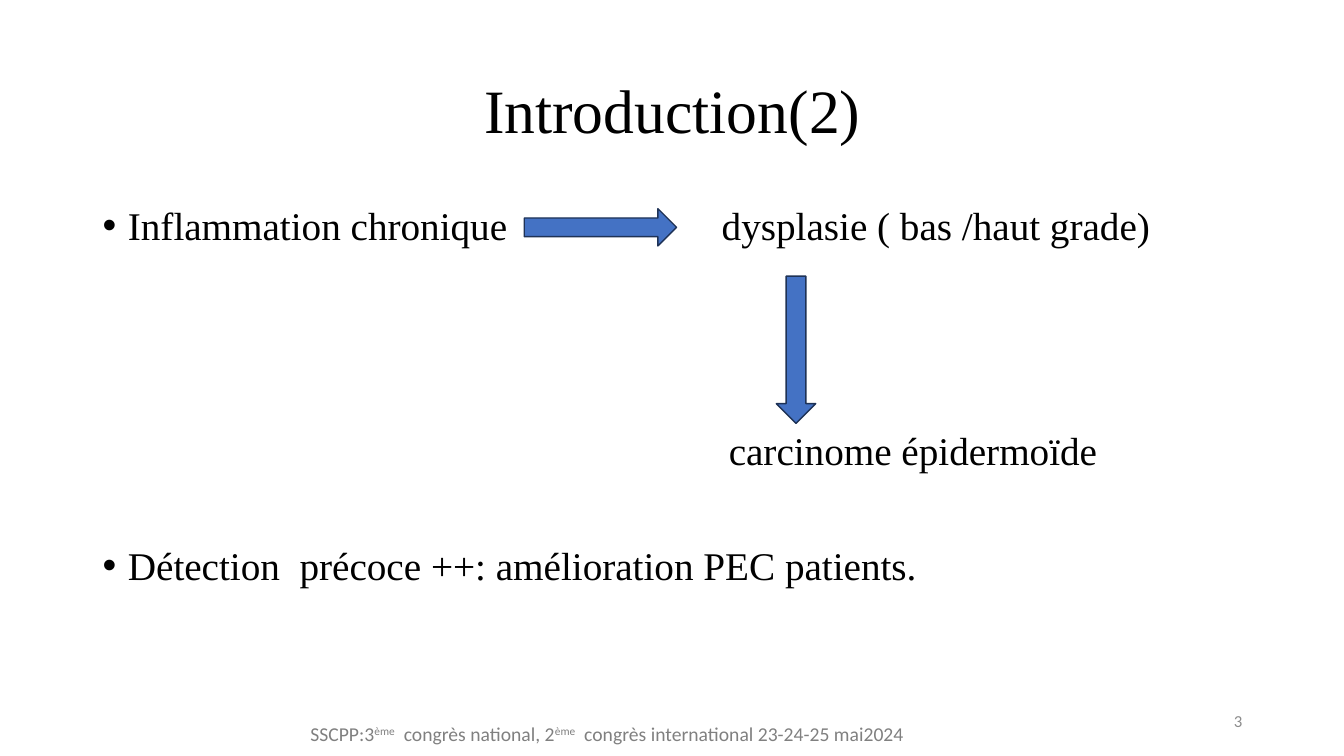
from dataclasses import dataclass
from typing import NamedTuple

import pptx
import pptx.dml.color
import pptx.enum.shapes
import pptx.enum.text
import pptx.oxml
import pptx.oxml.ns
import pptx.util

Inches = pptx.util.Inches
Pt = pptx.util.Pt
ALIGN = pptx.enum.text.PP_ALIGN
ANCHOR = pptx.enum.text.MSO_ANCHOR
SHAPE = pptx.enum.shapes.MSO_SHAPE


class Style(NamedTuple):
    font: str
    size: float
    color: str
    line_spacing: float = 1.0


@dataclass(frozen=True)
class Theme:
    title: Style = Style("Times New Roman", 44, "000000", 0.9)
    body: Style = Style("Times New Roman", 28, "000000", 0.9)
    footer: Style = Style("Calibri", 14, "808080")
    number: Style = Style("Calibri", 12, "8C8C8C")
    arrow_fill: str = "4472C4"
    arrow_line: str = "1E3256"


class Box(NamedTuple):
    left: float
    top: float
    width: float
    height: float


class Run(NamedTuple):
    text: str
    superscript: bool = False


class Label(NamedTuple):
    box: Box
    paragraphs: list[list[Run]]
    style: Style
    align: ALIGN = ALIGN.LEFT
    anchor: ANCHOR = ANCHOR.TOP
    bulleted: bool = False
    gap: float = 0


class Arrow(NamedTuple):
    box: Box
    direction: SHAPE


THEME = Theme()

LABELS = [
    Label(Box(0.92, 0.4, 11.5, 1.45), [[Run("Introduction(2)")]], THEME.title,
          ALIGN.CENTER, ANCHOR.MIDDLE),
    Label(Box(0.92, 2, 11.5, 4.76),
          [[Run("Inflammation chronique")],
           [Run("Détection  précoce ++: amélioration PEC patients.")]],
          THEME.body, bulleted=True, gap=212.4),
    Label(Box(7.06, 2, 5.3, 0.5), [[Run("dysplasie ( bas /haut grade)")]], THEME.body),
    Label(Box(7.13, 4.23, 5.3, 0.5), [[Run("carcinome épidermoïde")]], THEME.body),
    Label(Box(2.98, 7.11, 8.97, 0.34),
          [[Run("SSCPP:3"), Run("ème", True), Run("  congrès national, 2"),
            Run("ème", True), Run("  congrès international 23-24-25 mai2024")]],
          THEME.footer),
    Label(Box(9.42, 6.95, 3, 0.4), [[Run("3")]], THEME.number,
          ALIGN.RIGHT, ANCHOR.MIDDLE),
]

ARROWS = [
    Arrow(Box(5.2, 2.07, 1.51, 0.37), SHAPE.RIGHT_ARROW),
    Arrow(Box(7.7, 2.74, 0.39, 1.46), SHAPE.DOWN_ARROW),
]


def rgb(color: str) -> pptx.dml.color.RGBColor:
    return pptx.dml.color.RGBColor.from_string(color)


def add_bullet(paragraph) -> None:
    """Give the paragraph a round bullet with a hanging indent."""
    properties = paragraph._p.get_or_add_pPr()
    properties.set("marL", str(Inches(0.25)))
    properties.set("indent", str(Inches(-0.25)))
    namespace = pptx.oxml.ns.nsdecls("a")
    for element in ('<a:buFont {} typeface="Arial"/>', '<a:buChar {} char="•"/>'):
        properties.append(pptx.oxml.parse_xml(element.format(namespace)))


def add_label(slide, label: Label) -> None:
    frame = slide.shapes.add_textbox(*map(Inches, label.box)).text_frame
    frame.word_wrap = True
    frame.vertical_anchor = label.anchor
    for index, runs in enumerate(label.paragraphs):
        paragraph = frame.add_paragraph() if index else frame.paragraphs[0]
        paragraph.alignment = label.align
        paragraph.line_spacing = label.style.line_spacing
        if index:
            paragraph.space_before = Pt(label.gap)
        if label.bulleted:
            add_bullet(paragraph)
        paragraph.font.name = label.style.font
        paragraph.font.size = Pt(label.style.size)
        paragraph.font.color.rgb = rgb(label.style.color)
        for part in runs:
            run = paragraph.add_run()
            run.text = part.text
            if part.superscript:
                run._r.get_or_add_rPr().set("baseline", "30000")


def add_arrow(slide, arrow: Arrow) -> None:
    shape = slide.shapes.add_shape(arrow.direction, *map(Inches, arrow.box))
    shape.shadow.inherit = False
    shape.fill.solid()
    shape.fill.fore_color.rgb = rgb(THEME.arrow_fill)
    shape.line.color.rgb = rgb(THEME.arrow_line)
    shape.line.width = Pt(1)


def main() -> None:
    presentation = pptx.Presentation()
    presentation.slide_width = Inches(13.33)
    presentation.slide_height = Inches(7.5)
    slide = presentation.slides.add_slide(presentation.slide_layouts[6])
    for label in LABELS:
        add_label(slide, label)
    for arrow in ARROWS:
        add_arrow(slide, arrow)
    presentation.save("out.pptx")


if __name__ == "__main__":
    main()
